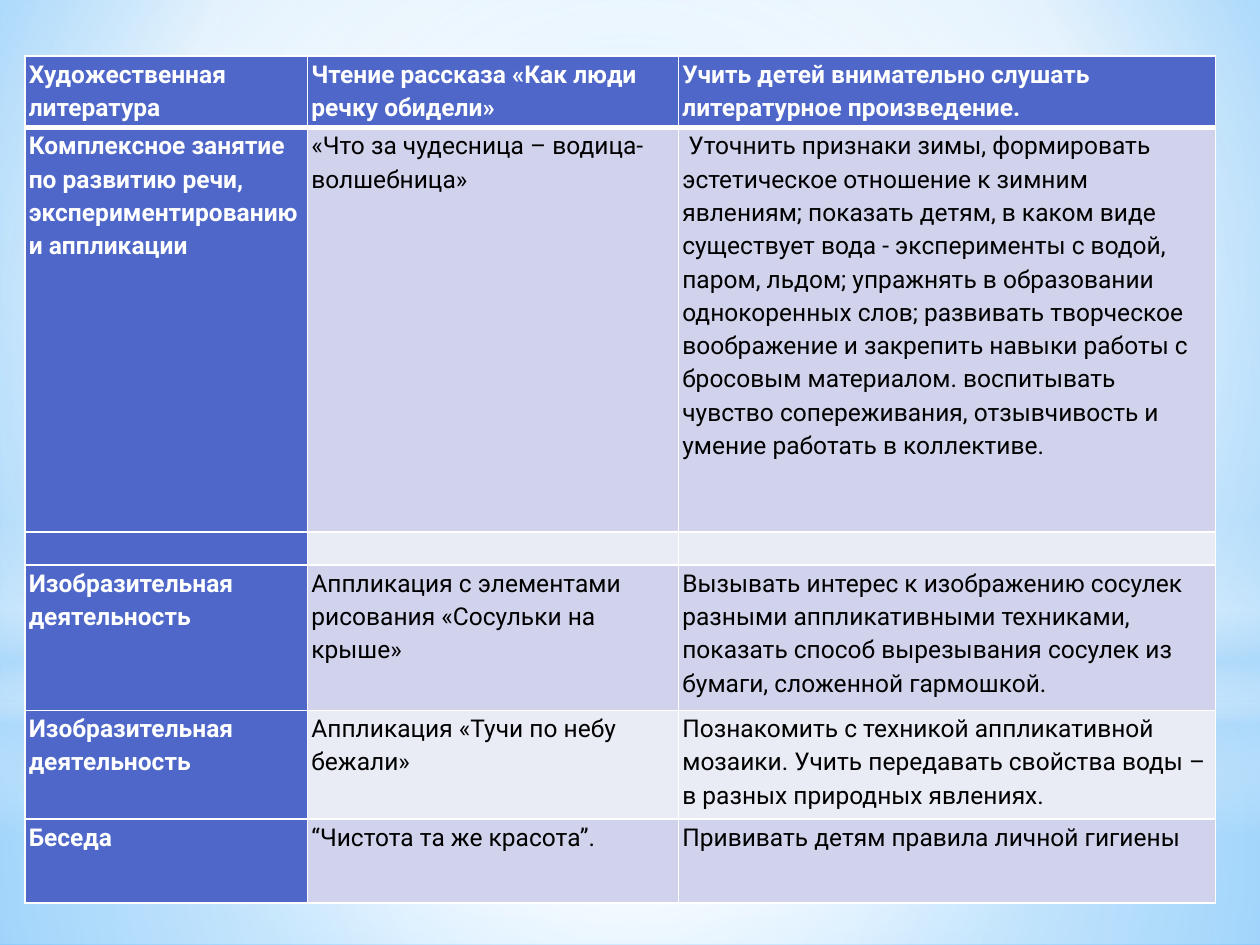
"""Build a slide with a table of preschool activities on a soft blue background."""
from lxml import etree
from pptx import Presentation
from pptx import util as u
from pptx.dml.color import RGBColor
from pptx.enum import shapes
from pptx.oxml import ns

Pt = u.Pt
WHITE = RGBColor(0xFF, 0xFF, 0xFF)
BLACK = RGBColor(0, 0, 0)
INDIGO = RGBColor(0x4E, 0x67, 0xC8)
LAVENDER = RGBColor(0xD0, 0xD3, 0xEB)
PALE = RGBColor(0xE9, 0xEB, 0xF5)
SKY = RGBColor(0x9E, 0xD5, 0xFF)
AZURE = RGBColor(0x5B, 0xB9, 0xFF)
MIST = RGBColor(0xB4, 0xDC, 0xFA)

FONT = "Roboto"
CENTER = (50, 50, 50, 50)
BACKDROP = [(0, SKY, 100), (60, WHITE, 100), (100, AZURE, 100)]
BACKDROP_FOCUS = (20, 10, 20, 60)
RECTANGLE = shapes.MSO_SHAPE.RECTANGLE
GLOWS = [
    (RECTANGLE, 402, 138, [(0, WHITE, 91), (37, WHITE, 76), (100, MIST, 79)], CENTER),
    (RECTANGLE, 0, 402, [(0, WHITE, 89), (48, WHITE, 62), (100, MIST, 79)], CENTER),
    (RECTANGLE, 297, 180, [(0, WHITE, 0), (29, WHITE, 30), (45, MIST, 40),
                           (55, WHITE, 26), (65, MIST, 60), (100, WHITE, 0)], None),
    (shapes.MSO_SHAPE.OVAL, 126, 402, [(0, WHITE, 100), (56, WHITE, 0)], CENTER),
]

COLUMN_WIDTHS = [161.5, 212, 307]
ROWS = [
    (41, "Художественная литература", "Чтение рассказа «Как люди речку обидели»",
     "Учить детей внимательно слушать литературное произведение."),
    (231, "Комплексное занятие по развитию речи, экспериментированию и аппликации",
     "«Что за чудесница – водица-волшебница»",
     " Уточнить признаки зимы, формировать эстетическое отношение к зимним явлениям; "
     "показать детям, в каком виде существует вода - эксперименты с водой, паром, льдом; "
     "упражнять в образовании однокоренных слов; развивать творческое воображение и "
     "закрепить навыки работы с бросовым материалом. воспитывать чувство сопереживания, "
     "отзывчивость и умение работать в коллективе."),
    (19, "", "", ""),
    (83, "Изобразительная деятельность",
     "Аппликация с элементами рисования «Сосульки на крыше»",
     "Вызывать интерес к изображению сосулек разными аппликативными техниками, "
     "показать способ вырезывания сосулек из бумаги, сложенной гармошкой."),
    (62, "Изобразительная деятельность", "Аппликация «Тучи по небу бежали»",
     "Познакомить с техникой аппликативной мозаики. Учить передавать свойства воды – "
     "в разных природных явлениях."),
    (48, "Беседа", "“Чистота та же красота”.", "Прививать детям правила личной гигиены"),
]


def add_element(parent, tag, **attributes):
    element = etree.SubElement(parent, ns.qn(tag))
    for name, value in attributes.items():
        element.set(name, str(value))
    return element


def set_gradient(fill, owner, stops, focus):
    fill.solid()
    solid = next(owner.iter(ns.qn("a:solidFill")))
    gradient = etree.Element(ns.qn("a:gradFill"), rotWithShape="1")
    stop_list = add_element(gradient, "a:gsLst")
    for position, color, opacity in stops:
        stop = add_element(stop_list, "a:gs", pos=position * 1000)
        tint = add_element(stop, "a:srgbClr", val=color)
        if opacity < 100:
            add_element(tint, "a:alpha", val=opacity * 1000)
    if focus:
        circle = add_element(gradient, "a:path", path="circle")
        sides = {side: value * 1000 for side, value in zip("ltrb", focus)}
        add_element(circle, "a:fillToRect", **sides)
    else:
        add_element(gradient, "a:lin", ang=90 * 60000, scaled=0)
    solid.getparent().replace(solid, gradient)


def add_background(slide, width):
    fill = slide.background.fill
    set_gradient(fill, slide.element.cSld, BACKDROP, BACKDROP_FOCUS)
    for kind, top, height, stops, focus in GLOWS:
        shape = slide.shapes.add_shape(kind, 0, Pt(top), width, Pt(height))
        shape.shadow.inherit = False
        shape.line.fill.background()
        set_gradient(shape.fill, shape.element.spPr, stops, focus)


def set_borders(cell, widths):
    properties = cell._tc.get_or_add_tcPr()
    for side, width in widths.items():
        line = add_element(properties, f"a:ln{side}", w=Pt(width))
        color = add_element(line, "a:solidFill")
        add_element(color, "a:srgbClr", val=WHITE)


def format_cell(cell, content, row, column):
    heading = row == 0 or column == 0
    cell.margin_left = cell.margin_right = Pt(2.25)
    cell.margin_top = cell.margin_bottom = 0
    set_borders(cell, {"L": 1, "R": 1, "T": 3 if row == 1 else 1, "B": 3 if row == 0 else 1})
    cell.fill.solid()
    cell.fill.fore_color.rgb = INDIGO if heading else LAVENDER if row % 2 else PALE
    paragraph = cell.text_frame.paragraphs[0]
    if content:
        paragraph.text = content
    else:
        add_element(paragraph._p, "a:endParaRPr", sz=1400)
    paragraph.line_spacing = 1.15
    paragraph.space_after = Pt(10)
    paragraph.font.name = FONT
    paragraph.font.size = Pt(14)
    paragraph.font.bold = heading
    paragraph.font.color.rgb = WHITE if heading else BLACK


def add_activities(slide):
    height = sum(row[0] for row in ROWS)
    table = slide.shapes.add_table(len(ROWS), len(COLUMN_WIDTHS), Pt(14.2), Pt(32),
                                   Pt(sum(COLUMN_WIDTHS)), Pt(height)).table
    table.horz_banding = False
    table.first_row = False
    for column, width in zip(table.columns, COLUMN_WIDTHS):
        column.width = Pt(width)
    for row, (row_height, *contents) in enumerate(ROWS):
        table.rows[row].height = Pt(row_height)
        for column, content in enumerate(contents):
            format_cell(table.cell(row, column), content, row, column)


def main():
    presentation = Presentation()
    presentation.slide_width, presentation.slide_height = Pt(720), Pt(540)
    slide = presentation.slides.add_slide(presentation.slide_layouts[6])
    add_background(slide, presentation.slide_width)
    add_activities(slide)
    presentation.save("out.pptx")


if __name__ == "__main__":
    main()
